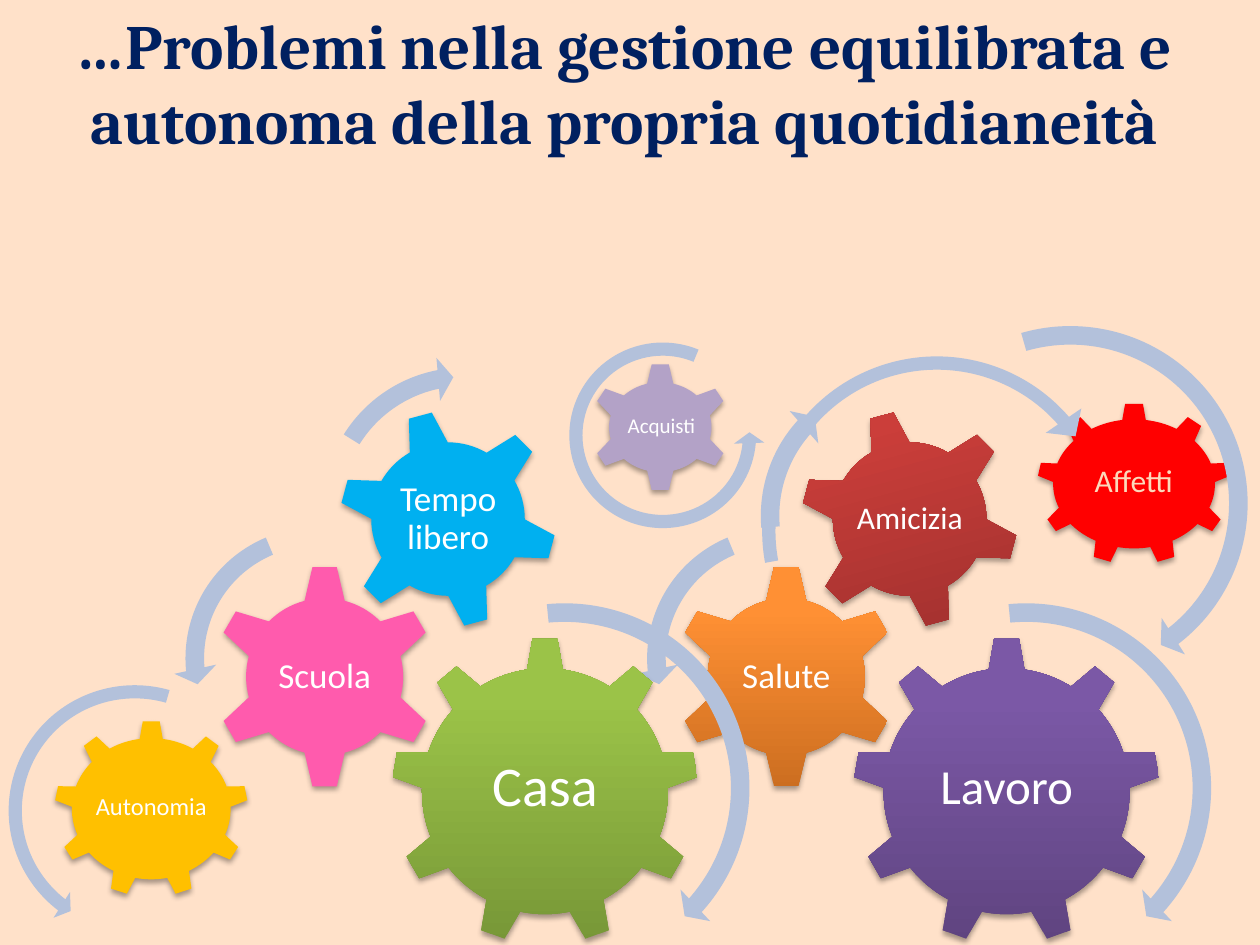
"""Build a slide of gears and arrows about balancing daily life."""
from lxml.etree import SubElement
from pptx import Presentation
from pptx.dml.color import RGBColor as RGB
from pptx.enum.shapes import MSO_SHAPE as Kind
from pptx.enum.text import MSO_ANCHOR as Anchor, PP_ALIGN as Align
from pptx.oxml.ns import qn
from pptx.util import Pt

CREAM, NAVY, WHITE = RGB(255, 225, 201), RGB(0, 32, 96), RGB(255, 255, 255)
PEACH, STEEL, BLACK = RGB(252, 217, 187), RGB(179, 193, 219), RGB(0, 0, 0)
PINK, SKY, RED = RGB(255, 91, 173), RGB(0, 176, 240), RGB(255, 0, 0)
LILAC, GOLD = RGB(179, 162, 199), RGB(255, 192, 0)
PURPLE = RGB(95, 68, 128), RGB(123, 88, 166)
ORANGE = RGB(204, 110, 32), RGB(255, 144, 52)
BRICK = RGB(156, 47, 45), RGB(203, 62, 58)
GREEN = RGB(119, 151, 55), RGB(155, 195, 72)

TITLE = ["…Problemi nella gestione equilibrata e", "autonoma della propria quotidianeità"]

WIDE = 0.047, 2.99, 25.131, 158.679, 0.055
LEFT = 0.065, 4.3, 104.891, 148.378, 0.075
SHORT = 0.06, 3.941, 133.138, 105.082, 0.07
LONG = 0.049, 3.126, 31.333, 152.342, 0.057
THIN = 0.035, 4.043, 25.999, 152.342, 0.057

TRIO_GEARS = [
    (Kind.GEAR_9, (487.4, 364.3, 175.7, 175.7), 0, (522.7, 405.4, 105.1, 90.7)),
    (Kind.GEAR_6, (385.2, 322.6, 128.2, 128.2), 0, (417.6, 355, 63.4, 63.4)),
    (Kind.GEAR_6, (457.2, 234, 125.3, 125.3), 345, (484.6, 261.4, 70.6, 70.6)),
]
TRIO_ARROWS = [
    (Kind.CIRCULAR_ARROW, (473.8, 337.7, 225.4, 225.4), WIDE),
    (Kind.LEFT_CIRCULAR_ARROW, (362.9, 294.5, 163.4, 163.4), LEFT),
]
TRIOS = [
    (0, [("Lavoro", 28, PURPLE), ("Salute", 20, ORANGE), ("Amicizia", 18, BRICK)],
     (427.7, 206.6, 176.4, 176.4), 0),
    (-263.8, [("Casa", 32, GREEN), ("Scuola", 20, PINK), ("Tempo libero", 20, SKY)],
     (177.1, 203, 176.4, 176.4), 36.8),
]
SIDES = [
    ([(Kind.GEAR_9, (592.6, 230.4, 110.9, 92.2), (613.4, 252, 69.1, 47.5),
       "Affetti", 18, RED, PEACH),
      (Kind.GEAR_6, (337, 207.4, 80.6, 73.4), (357.1, 226.1, 41.8, 36),
       "Acquisti", 12, LILAC, WHITE)],
     [((503.3, 179.3, 216.7, 216.7), LONG, False),
      ((320.4, 190.8, 116.6, 115.9), LEFT, True)]),
    ([(Kind.GEAR_9, (31, 411.8, 110.9, 100.8), (52.6, 435.6, 67.7, 51.8),
       "Autonomia", 14, GOLD, WHITE)],
     [((0, 386.6, 154.1, 153.4), LONG, True)]),
]


def pts(box, dx=0):
    x, y, w, h = box
    return Pt(x + dx), Pt(y), Pt(w), Pt(h)


def paint(shape, fill):
    shape.line.fill.background()
    shape.shadow.inherit = False
    if isinstance(fill, RGB):
        shape.fill.solid()
        shape.fill.fore_color.rgb = fill
        return
    shape.fill.gradient()
    shape.fill.gradient_angle = 90
    for stop, tone, spot in zip(shape.fill.gradient_stops, fill, (0, 0.8)):
        stop.color.rgb = tone
        stop.position = spot


def cast(shape):
    glow = shape.element.spPr.find(qn("a:effectLst"))
    drop = SubElement(glow, qn("a:outerShdw"), blurRad=str(Pt(3.1)),
                      dist=str(Pt(1.8)), dir="5400000", rotWithShape="0")
    tone = SubElement(drop, qn("a:srgbClr"), val=str(BLACK))
    SubElement(tone, qn("a:alpha"), val="35000")


def gear(shapes, kind, box, area, text, size, fill, ink=WHITE, turn=0, dx=0):
    wheel = shapes.add_shape(kind, *pts(box, dx))
    wheel.rotation = turn
    paint(wheel, fill)
    cast(wheel)
    frame = shapes.add_textbox(*pts(area, dx)).text_frame
    frame.word_wrap = True
    frame.vertical_anchor = Anchor.MIDDLE
    frame.margin_left = frame.margin_right = Pt(size / 10)
    frame.margin_top = frame.margin_bottom = Pt(size / 10)
    frame.text = text
    para = frame.paragraphs[0]
    para.alignment, para.line_spacing = Align.CENTER, 0.9
    style(para.font, "Calibri", size, ink)


def arrow(shapes, kind, box, shape_by, turn=0, flip=False, dx=0):
    arc = shapes.add_shape(kind, *pts(box, dx))
    for i, value in enumerate(shape_by):
        arc.adjustments[i] = value
    arc.rotation = turn
    if flip:
        arc.element.spPr.xfrm.set("flipH", "1")
    paint(arc, STEEL)


def style(font, name, size, ink):
    font.name, font.size, font.color.rgb = name, Pt(size), ink


def head(title):
    title.left, title.top, title.width, title.height = pts((14.4, 0, 684.7, 111.6))
    frame = title.text_frame
    frame.vertical_anchor = Anchor.TOP
    frame.text = "\n".join(TITLE)
    for para in frame.paragraphs:
        para.alignment = Align.CENTER
        para.space_before = Pt(0)
        para.font.bold = True
        style(para.font, "Cambria", 36, NAVY)


def main():
    deck = Presentation()
    deck.slide_width, deck.slide_height = Pt(720), Pt(540)
    slide = deck.slides.add_slide(deck.slide_layouts[5])
    slide.background.fill.solid()
    slide.background.fill.fore_color.rgb = CREAM
    head(slide.shapes.title)
    for dx, names, top, turn in TRIOS:
        group = slide.shapes.add_group_shape().shapes
        for (kind, box, tilt, area), (text, size, fill) in zip(TRIO_GEARS, names):
            gear(group, kind, box, area, text, size, fill, turn=tilt, dx=dx)
        for kind, box, curve in TRIO_ARROWS:
            arrow(group, kind, box, curve, dx=dx)
        arrow(group, Kind.CIRCULAR_ARROW, top, SHORT, turn)
    for gears, arcs in SIDES:
        group = slide.shapes.add_group_shape().shapes
        for row in gears:
            gear(group, *row)
        for box, curve, flip in arcs:
            arrow(group, Kind.CIRCULAR_ARROW, box, curve, flip=flip)
    arrow(slide.shapes, Kind.CIRCULAR_ARROW, (427, 195.1, 216.7, 216.7), THIN, 275.6)
    deck.save("out.pptx")


if __name__ == "__main__":
    main()
